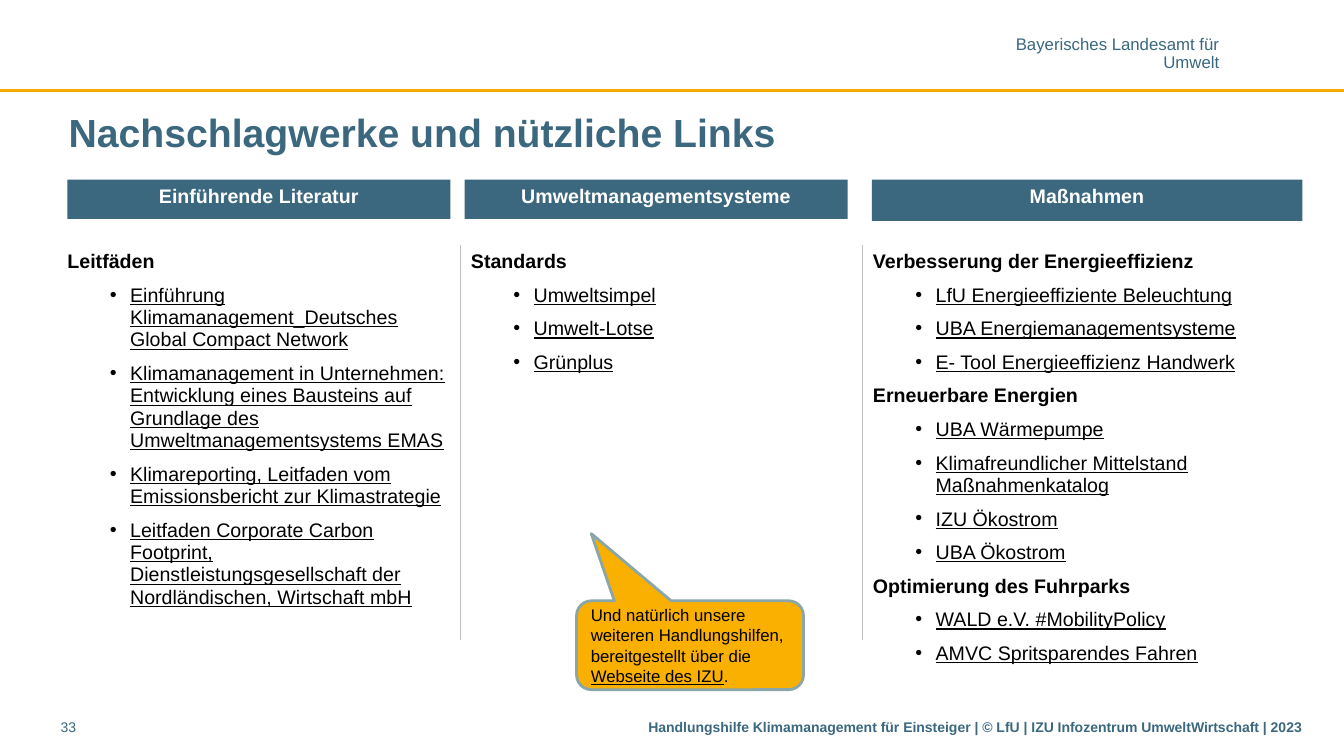
from lxml.etree import SubElement
from pptx import Presentation
from pptx.dml.color import RGBColor
from pptx.enum.shapes import MSO_CONNECTOR, MSO_SHAPE
from pptx.enum.text import MSO_ANCHOR, PP_ALIGN
from pptx.oxml.ns import qn
from pptx.util import Cm, Pt

PETROL = RGBColor(0x3B, 0x68, 0x7F)
AMBER = RGBColor(0xF9, 0xAA, 0x00)
CALLOUT_FILL = RGBColor(0xF9, 0xB0, 0x00)
CALLOUT_LINE = RGBColor(0x8A, 0xA6, 0xA8)
GREY = RGBColor(0xBF, 0xBF, 0xBF)
BLACK = RGBColor(0, 0, 0)
WHITE = RGBColor(0xFF, 0xFF, 0xFF)

# Text formats: size, colour, bold
TITLE = {"size": Pt(28), "color": PETROL, "bold": True}
BAR = {"size": Pt(14), "color": WHITE, "bold": True}
TOPIC = {"size": Pt(14), "color": BLACK, "bold": True}
LINK = {"size": Pt(14), "color": BLACK, "bold": False, "underline": True}
NOTE = {"size": Pt(12), "color": BLACK}
AGENCY = {"size": Pt(12), "color": PETROL}
PAGE = {"size": Pt(10), "color": PETROL}
FOOTER = {**PAGE, "bold": True}

# Bar text, bar box (left, width, height), list box (left, width, height), topics
BAR_TOP, LIST_TOP, DIVIDER_END = 4.53, 6.18, 16.13
COLUMNS = [
    ("Einführende Literatur", (1.7, 9.65, 0.99), (1.7, 9.6, 11.58), {
        "Leitfäden": [
            "Einführung Klimamanagement_Deutsches Global Compact Network",
            "Klimamanagement in Unternehmen: Entwicklung eines Bausteins auf "
            "Grundlage des Umweltmanagementsystems EMAS",
            "Klimareporting, Leitfaden vom Emissionsbericht zur Klimastrategie",
            "Leitfaden Corporate Carbon Footprint, Dienstleistungsgesellschaft der "
            "Nordländischen, Wirtschaft mbH",
        ],
    }),
    ("Umweltmanagementsysteme", (11.71, 9.65, 0.99), (11.87, 9.6, 10.54), {
        "Standards": ["Umweltsimpel", "Umwelt-Lotse", "Grünplus"],
    }),
    ("Maßnahmen", (21.97, 10.85, 1.04), (22, 10.8, 10.54), {
        "Verbesserung der Energieeffizienz": [
            "LfU Energieeffiziente Beleuchtung",
            "UBA Energiemanagementsysteme",
            "E- Tool Energieeffizienz Handwerk",
        ],
        "Erneuerbare Energien": [
            "UBA Wärmepumpe",
            "Klimafreundlicher Mittelstand Maßnahmenkatalog",
            "IZU Ökostrom",
            "UBA Ökostrom",
        ],
        "Optimierung des Fuhrparks": [
            "WALD e.V. #MobilityPolicy",
            "AMVC Spritsparendes Fahren",
        ],
    }),
]


def set_font(font, values):
    font.name = "Arial"
    for name, value in values.items():
        if name == "color":
            font.color.rgb = value
        else:
            setattr(font, name, value)


def add_run(paragraph, text, values):
    run = paragraph.add_run()
    run.text = text
    set_font(run.font, values)


def add_line(slide, start, end, color, width):
    line = slide.shapes.add_connector(MSO_CONNECTOR.STRAIGHT, *map(Cm, start + end))
    line.line.color.rgb = color
    line.line.width = Pt(width)
    SubElement(line._element.spPr, qn("a:effectLst"))


def format_frame(frame, **values):
    defaults = {"word_wrap": True, "margin_left": 0, "margin_right": 0}
    for name, value in {**defaults, **values}.items():
        setattr(frame, name, value)


def add_text(slide, box, lines, values, alignment=PP_ALIGN.LEFT, spacing=None, **frame_values):
    frame = slide.shapes.add_textbox(*map(Cm, box)).text_frame
    format_frame(frame, **frame_values)
    for index, text in enumerate(lines):
        paragraph = frame.add_paragraph() if index else frame.paragraphs[0]
        paragraph.alignment = alignment
        paragraph.line_spacing = spacing
        add_run(paragraph, text, values)


def add_block(slide, kind, box, fill):
    shape = slide.shapes.add_shape(kind, *map(Cm, box))
    shape.shadow.inherit = False
    shape.fill.solid()
    shape.fill.fore_color.rgb = fill
    shape.line.fill.background()
    shape.text_frame.word_wrap = True
    return shape


def add_bar(slide, text, left, width, height):
    bar = add_block(slide, MSO_SHAPE.RECTANGLE, (left, BAR_TOP, width, height), PETROL)
    bar.text_frame.vertical_anchor = MSO_ANCHOR.TOP
    paragraph = bar.text_frame.paragraphs[0]
    paragraph.alignment = PP_ALIGN.CENTER
    paragraph.line_spacing = Pt(16)
    add_run(paragraph, text, BAR)


def make_bullet(paragraph):
    paragraph.level = 1
    properties = paragraph._p.get_or_add_pPr()
    properties.set("marL", str(Cm(1.58)))
    properties.set("indent", str(Cm(-0.51)))
    color = SubElement(properties, qn("a:buClr"))
    SubElement(color, qn("a:srgbClr"), val=str(BLACK))
    SubElement(properties, qn("a:buFont"), typeface="Arial")
    SubElement(properties, qn("a:buChar"), char="•")


def add_link_list(slide, topics, left, width, height):
    box = slide.shapes.add_textbox(Cm(left), Cm(LIST_TOP), Cm(width), Cm(height))
    frame = box.text_frame
    format_frame(frame)
    rows = []
    for topic, links in topics.items():
        rows += [(topic, TOPIC)] + [(link, LINK) for link in links]
    for index, (text, values) in enumerate(rows):
        paragraph = frame.add_paragraph() if index else frame.paragraphs[0]
        if values is LINK:
            make_bullet(paragraph)
        paragraph.line_spacing = Pt(16)
        paragraph.space_before = Pt(8 if index else 0)
        add_run(paragraph, text, values)


def add_callout(slide, box, parts):
    callout = add_block(slide, MSO_SHAPE.ROUNDED_RECTANGULAR_CALLOUT, box, CALLOUT_FILL)
    callout.line.color.rgb = CALLOUT_LINE
    callout.line.width = Pt(2)
    for index, value in enumerate((-0.435, -1.256, 0.167)):
        callout.adjustments[index] = value
    callout.text_frame.vertical_anchor = MSO_ANCHOR.MIDDLE
    paragraph = callout.text_frame.paragraphs[0]
    paragraph.alignment = PP_ALIGN.LEFT
    for text, underline in parts:
        add_run(paragraph, text, {**NOTE, "underline": underline})


def set_title(slide, text, box):
    title = slide.shapes.title
    title.left, title.top, title.width, title.height = map(Cm, box)
    format_frame(title.text_frame, vertical_anchor=MSO_ANCHOR.MIDDLE)
    paragraph = title.text_frame.paragraphs[0]
    paragraph.alignment = PP_ALIGN.LEFT
    add_run(paragraph, text, TITLE)


def main():
    presentation = Presentation()
    presentation.slide_width = Cm(33.87)
    presentation.slide_height = Cm(19.05)
    slide = presentation.slides.add_slide(presentation.slide_layouts[5])

    # Header
    add_line(slide, (0, 2.29), (33.87, 2.29), AMBER, 2)
    add_text(slide, (25.58, 0.94, 5.15, 0.86), ["Bayerisches Landesamt für", "Umwelt"],
             AGENCY, PP_ALIGN.RIGHT, 0.85, word_wrap=False, margin_top=0, margin_bottom=0)
    set_title(slide, "Nachschlagwerke und nützliche Links", (1.73, 2.13, 22.7, 2.39))

    # Columns
    for x in (11.61, 21.74):
        add_line(slide, (x, LIST_TOP), (x, DIVIDER_END), GREY, 0.75)
    for heading, bar_box, list_box, topics in COLUMNS:
        add_bar(slide, heading, *bar_box)
        add_link_list(slide, topics, *list_box)

    # Callout
    add_callout(slide, (14.53, 15.14, 5.72, 2.24), [
        ("Und natürlich unsere weiteren Handlungshilfen, bereitgestellt über die ", False),
        ("Webseite des IZU", True),
        (".", False),
    ])

    # Footer
    add_text(slide, (1.53, 17.98, 1.78, 0.79), ["33"], PAGE)
    add_text(slide, (15.63, 17.98, 17.17, 0.79),
             ["Handlungshilfe Klimamanagement für Einsteiger | © LfU | "
              "IZU Infozentrum UmweltWirtschaft | 2023"], FOOTER, PP_ALIGN.RIGHT)

    presentation.save("out.pptx")


if __name__ == "__main__":
    main()
